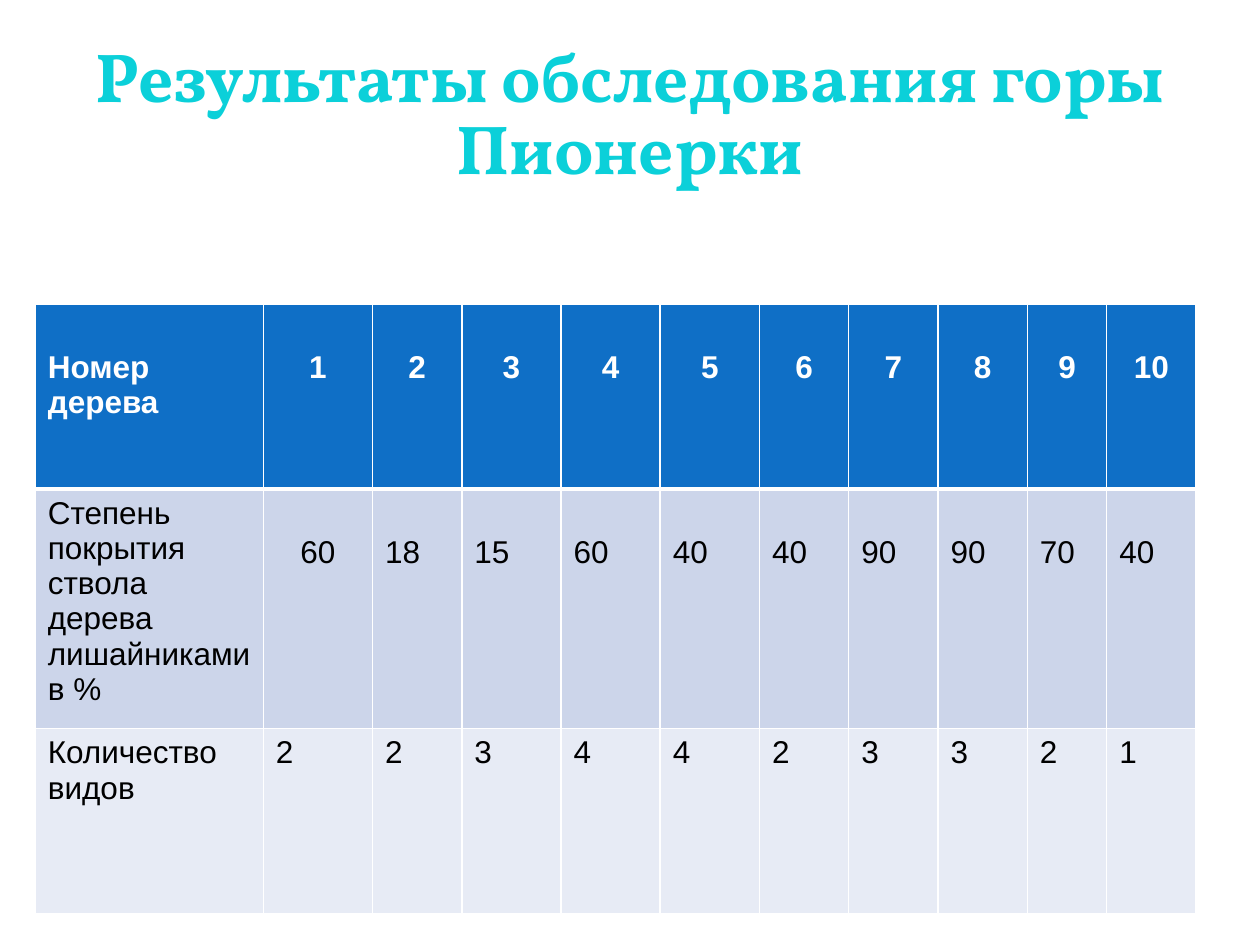
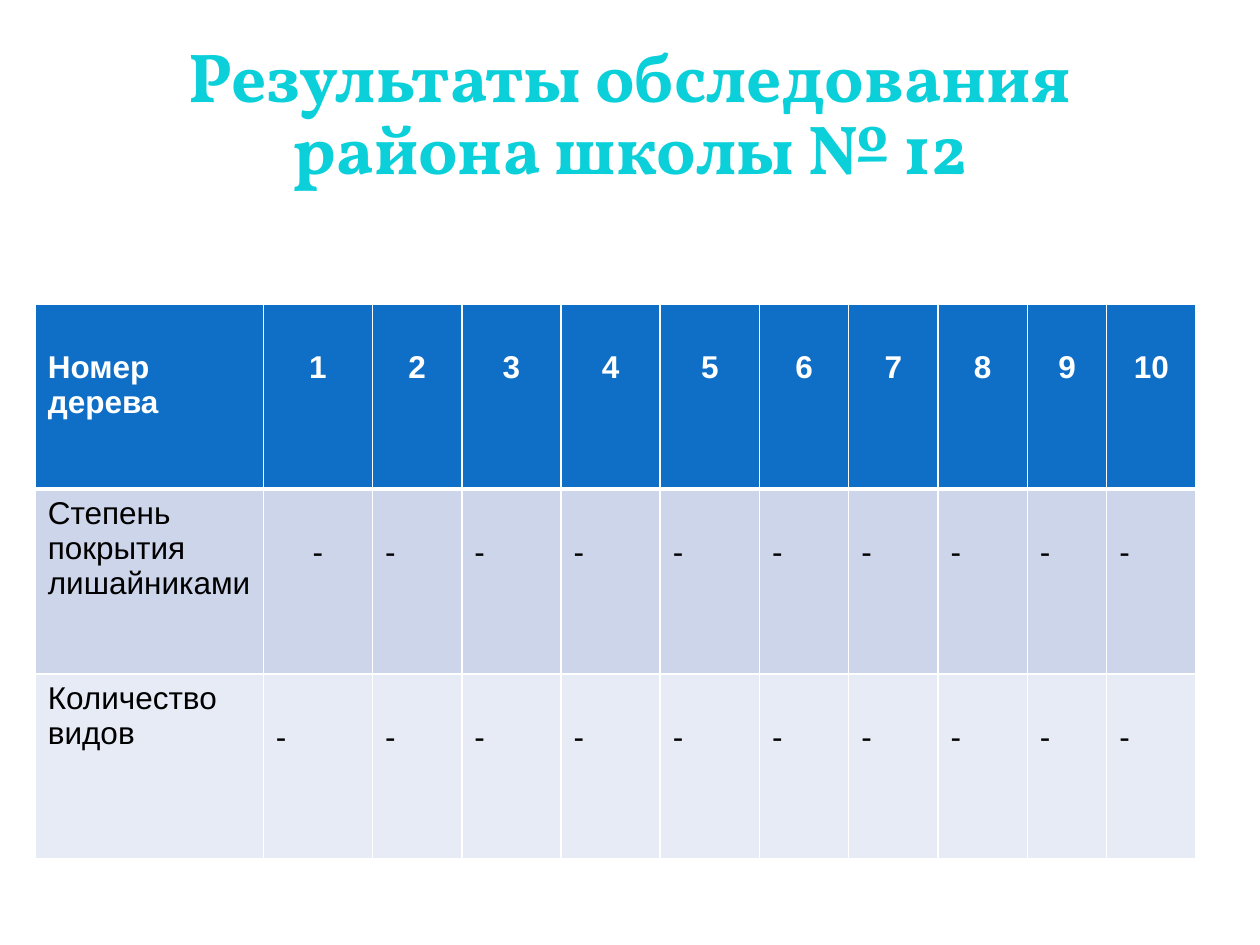
from lxml import etree
from pptx import Presentation, util as u
from pptx.dml.color import RGBColor
from pptx.enum import text
from pptx.oxml import ns

# Content: one heading and one survey per slide
TREES = [str(number) for number in range(1, 11)]
SURVEYS = [
    {
        "title": "Результаты обследования горы Пионерки",
        "cover_label": ["Степень покрытия ствола дерева лишайниками", "в %"],
        "cover": ["60", "18", "15", "60", "40", "40", "90", "90", "70", "40"],
        "species": ["2", "2", "3", "4", "4", "2", "3", "3", "2", "1"],
        "species_lowered": False,
    },
    {
        "title": "Результаты обследования района школы № 12",
        "cover_label": ["Степень покрытия лишайниками"],
        "cover": ["-"] * len(TREES),
        "species": ["-"] * len(TREES),
        "species_lowered": True,
    },
]

# Shared style
COLORS = {
    "title": "0BD0D9", "outline": "FEFEFE", "header": "0F6FC6",
    "cover": "CCD5EA", "species": "E7EBF5", "grid": "FFFFFF",
    "header_text": "FFFFFF", "body_text": "000000",
}
TITLE_FONT, TABLE_FONT = "Vollkorn", "Arial"
COLUMNS = [4.6, 2.2, 1.8, 2, 2, 2, 1.8, 1.8, 1.8, 1.6, 1.8]
ROW_HEIGHT = 3.73
TOP_INSET, LOWERED_INSET = 0.13, 0.92
THIN, THICK = 1, 3


def color(name):
    return RGBColor.from_string(COLORS[name])


def add_line(parent, tag, name, points):
    line = etree.SubElement(parent, ns.qn(tag), w=str(u.Pt(points)))
    fill = etree.SubElement(line, ns.qn("a:solidFill"))
    etree.SubElement(fill, ns.qn("a:srgbClr"), val=COLORS[name])
    return line


def add_span(para, words, font, size, name, bold):
    span = para.add_run()
    span.text = words
    span.font.name, span.font.size, span.font.bold = font, u.Pt(size), bold
    span.font.color.rgb = color(name)
    return span


def add_title(page, words):
    box = page.shapes.add_textbox(u.Cm(1.27), u.Cm(0.76), u.Cm(22.86), u.Cm(3.18))
    frame = box.text_frame
    frame.word_wrap = True
    frame.vertical_anchor = text.MSO_ANCHOR.MIDDLE
    para = frame.paragraphs[0]
    para.alignment = text.PP_ALIGN.CENTER
    para.line_spacing = 0.87
    span = add_span(para, words, TITLE_FONT, 39.6, "title", True)
    properties = span.font._element
    properties.insert(0, add_line(properties, "a:ln", "outline", 1.5))


def fill_cell(cell, lines, row, centered, lowered):
    """Draw the borders, the fill and the text of one cell."""
    properties = cell._tc.get_or_add_tcPr()
    widths = {"L": THIN, "R": THIN,
              "T": THICK if row == 1 else THIN,
              "B": THICK if row == 0 else THIN}
    for side, points in widths.items():
        add_line(properties, f"a:ln{side}", "grid", points)
    cell.fill.solid()
    cell.fill.fore_color.rgb = color(["header", "cover", "species"][row])
    cell.margin_top = u.Cm(LOWERED_INSET if lowered else TOP_INSET)
    frame = cell.text_frame
    for index, words in enumerate(lines):
        para = frame.add_paragraph() if index else frame.paragraphs[0]
        if centered:
            para.alignment = text.PP_ALIGN.CENTER
        add_span(para, words, TABLE_FONT, 18,
                 "body_text" if row else "header_text", row == 0)


def add_survey_table(page, survey):
    rows = [
        [["Номер дерева"]] + [[tree] for tree in TREES],
        [survey["cover_label"]] + [[share] for share in survey["cover"]],
        [["Количество видов"]] + [[count] for count in survey["species"]],
    ]
    table = page.shapes.add_table(
        len(rows), len(COLUMNS), u.Cm(0.71), u.Cm(6.13),
        u.Cm(sum(COLUMNS)), u.Cm(ROW_HEIGHT * len(rows))).table
    for column, width in zip(table.columns, COLUMNS):
        column.width = u.Cm(width)
    for r, cells in enumerate(rows):
        table.rows[r].height = u.Cm(ROW_HEIGHT)
        for c, lines in enumerate(cells):
            centered = c > 0 and r == 0 or (r, c) == (1, 1)
            lowered = r == 0 or c > 0 and (r == 1 or survey["species_lowered"])
            fill_cell(table.cell(r, c), lines, r, centered, lowered)


def main():
    deck = Presentation()
    deck.slide_width, deck.slide_height = u.Cm(25.4), u.Cm(19.05)
    for survey in SURVEYS:
        page = deck.slides.add_slide(deck.slide_layouts[6])
        add_title(page, survey["title"])
        add_survey_table(page, survey)
    deck.save("out.pptx")


if __name__ == "__main__":
    main()
